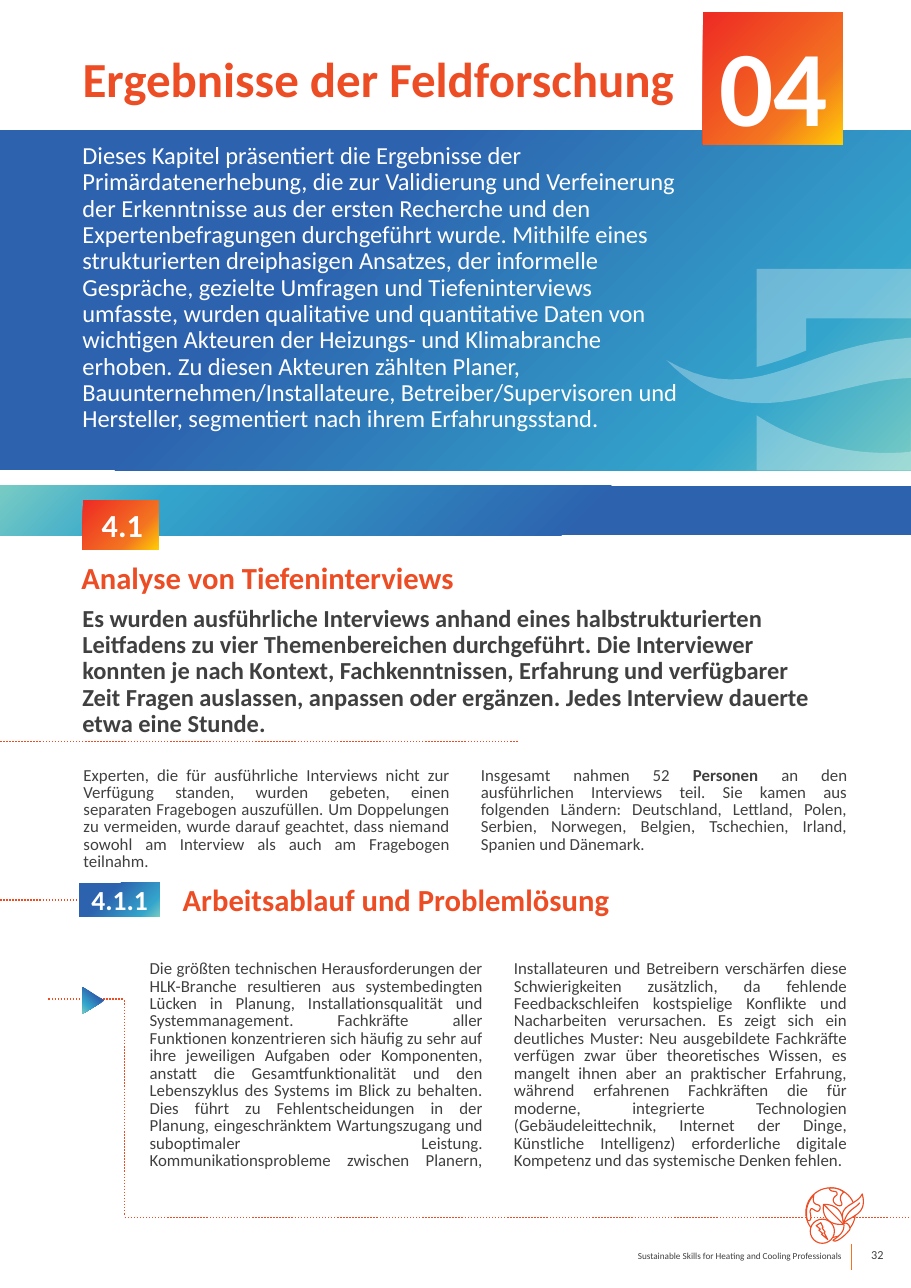
"""Builds the chapter 04 page on the field research results."""
import pptx
import pptx.util
import pptx.dml.color
import pptx.enum.dml
import pptx.enum.shapes
import pptx.enum.text
import pptx.oxml.ns
from lxml import etree

Pt = pptx.util.Pt
qn = pptx.oxml.ns.qn
SHAPE = pptx.enum.shapes.MSO_SHAPE
ALIGN = pptx.enum.text.PP_ALIGN
ANCHOR = pptx.enum.text.MSO_ANCHOR

W, H = 595.44, 841.68
BANNER_TOP, BANNER_BOTTOM = 85, 307.4
ORANGE, GREY, WHITE = "ED4D24", "404040", "FFFFFF"
BLUES = [(35, "2D62AE"), (82, "33A5CC"), (100, "77CBC4")]
ARROW_BLUES = [(35, "2D62AE"), (74, "33A5CC"), (100, "77CBC4")]
FLAME = [(3, "EE2D24"), (68, "F37321"), (100, "FFCD05")]

TITLE = "Ergebnisse der Feldforschung"
INTRO = (
    "Dieses Kapitel präsentiert die Ergebnisse der Primärdatenerhebung, die zur Validierung und "
    "Verfeinerung der Erkenntnisse aus der ersten Recherche und den Expertenbefragungen durchgeführt "
    "wurde. Mithilfe eines strukturierten dreiphasigen Ansatzes, der informelle Gespräche, gezielte "
    "Umfragen und Tiefeninterviews umfasste, wurden qualitative und quantitative Daten von wichtigen "
    "Akteuren der Heizungs- und Klimabranche erhoben. Zu diesen Akteuren zählten Planer, "
    "Bauunternehmen/Installateure, Betreiber/Supervisoren und Hersteller, segmentiert nach ihrem "
    "Erfahrungsstand.")
LEAD = (
    "Es wurden ausführliche Interviews anhand eines halbstrukturierten Leitfadens zu vier "
    "Themenbereichen durchgeführt. Die Interviewer konnten je nach Kontext, Fachkenntnissen, Erfahrung "
    "und verfügbarer Zeit Fragen auslassen, anpassen oder ergänzen. Jedes Interview dauerte etwa eine "
    "Stunde.")
EXPERTS = (
    "Experten, die für ausführliche Interviews nicht zur Verfügung standen, wurden gebeten, einen "
    "separaten Fragebogen auszufüllen. Um Doppelungen zu vermeiden, wurde darauf geachtet, dass niemand "
    "sowohl am Interview als auch am Fragebogen teilnahm.")
PEOPLE = [
    ("Insgesamt nahmen 52", False), (" Personen", True),
    (" an den ausführlichen Interviews teil. Sie kamen aus folgenden Ländern: Deutschland, Lettland, "
     "Polen, Serbien, Norwegen, Belgien, Tschechien, Irland, Spanien und Dänemark.", False)]
WORKFLOW = [
    ("Die größten technischen Herausforderungen der HLK-Branche resultieren aus systembedingten Lücken "
     "in Planung, Installationsqualität und Systemmanagement. Fachkräfte aller Funktionen konzentrieren "
     "sich häufig zu sehr auf ihre jeweiligen Aufgaben oder Komponenten, anstatt die "
     "Gesamtfunktionalität und den Lebenszyklus des Systems im Blick zu behalten. Dies führt zu "
     "Fehlentscheidungen in der Planung, eingeschränktem Wartungszugang und suboptimaler Leistung. ",
     False),
    ("Kommunikationsprobleme zwischen Planern, Installateuren und Betreibern verschärfen diese "
     "Schwierigkeiten zusätzlich, da fehlende Feedbackschleifen kostspielige Konflikte und Nacharbeiten "
     "verursachen. Es zeigt sich ein deutliches Muster: Neu ausgebildete Fachkräfte verfügen zwar über "
     "theoretisches Wissen, es mangelt ihnen aber an praktischer Erfahrung, während erfahrenen "
     "Fachkräften die für moderne, integrierte Technologien (Gebäudeleittechnik, Internet der Dinge, "
     "Künstliche Intelligenz) erforderliche digitale Kompetenz und das systemische Denken fehlen.",
     False)]

TITLE_FMT = dict(size=32, color=ORANGE, bold=True, leading=33.2)
HEADING = dict(size=20, color=ORANGE, bold=True, leading=21)
BODY = dict(size=11, color=GREY, align=ALIGN.JUSTIFY, columns=2)
TEXTS = [
    ((46.8, 90, 403.9, 210), [INTRO], dict(size=16, color=WHITE, leading=17.2)),
    ((450.7, 9, 110.2, 102), ["04"], dict(size=70, color=WHITE, bold=True, align=ALIGN.CENTER)),
    ((46.1, 365, 380.9, 28.8), ["Analyse von Tiefeninterviews"], HEADING),
    ((46.8, 392.4, 504, 96), [LEAD], dict(size=16, color=GREY, bold=True, leading=17.2)),
    ((47.5, 498.2, 513.4, 78.5), [EXPERTS, PEOPLE], dict(BODY, leading=11.2)),
    ((112.3, 575.3, 433.4, 28.8), ["Arbeitsablauf und Problemlösung"], HEADING),
    ((90.7, 624.2, 470.2, 151.9), [WORKFLOW], dict(BODY, leading=11.4)),
    ((174.2, 813.6, 383, 14.4), ["Sustainable Skills for Heating and Cooling Professionals"],
     dict(size=6, color=GREY, align=ALIGN.RIGHT)),
    ((557.3, 809.3, 27.4, 21.6), ["32"],
     dict(size=8, color=GREY, align=ALIGN.RIGHT, anchor=ANCHOR.MIDDLE)),
]
TILES = [
    ((54, 326.9, 49.7, 32.4), FLAME, "4.1", 21, 12.5),
    ((51.8, 576.7, 52.6, 22.3), BLUES, "4.1.1", 18, 8),
]
DOTTED = [
    (81.4, 795.6, W, 795.6), (0, 484.6, 338.4, 484.6), (0, 588.2, 66.2, 588.2),
    (31.7, 653, 80.6, 653), (81.4, 653.8, 81.4, 794.2)]
SWOOSH = [
    [(653.8, 226.8), (536.4, 198.7, 508.3, 277.2, 435.6, 235.4),
     (479.5, 280.1, 519.1, 260.6, 571, 249.8), (614.2, 241.2, 657.4, 252.7, 686.9, 271.4)],
    [(527, 208.1), (W, 208.1), (W, 175.7), (494.6, 175.7), (494.6, 239.8),
     (506.9, 236.9, 518.4, 232.6, 527, 229)],
    [(W, BANNER_BOTTOM), (745.2, 308.2), (701.3, 263.5, 661.7, 283, 610.6, 293),
     (567.4, 301.7, 523.4, 290.9, 494.6, 271.4), (494.6, BANNER_BOTTOM)],
]
GLOBE, ENERGY = (526.7, 776.2, 32.4, 32.4), (529.6, 796.7, 15.8, 15.8)
BOLT = (533.5, 799, 7.5, 11)
ICON_OUTLINES = [
    [(532, 781), (530, 790, 537, 785, 536, 790), (534, 795, 530, 786, 529.5, 792),
     (531, 798, 529, 798, 527.8, 797.5), (526, 791, 528, 785, 532, 781)],
    [(542, 776.6), (543, 780, 548, 777, 547, 781), (542, 784, 546, 788, 549, 788),
     (553, 787, 546, 784, 551.5, 779), (548, 776.5, 545, 776, 542, 776.6)],
    [(551.2, 800), (551, 791, 546, 787, 538.3, 787), (537, 796, 543, 801, 551.2, 800)],
    [(551.6, 799), (547, 787, 560, 788, 563.6, 780.2), (567, 793, 558, 794, 551.6, 799)],
    [(538.3, 787), (551.2, 800)],
    [(551.6, 799), (554, 790, 559, 790, 562, 786)],
    [(544.5, 810.5), (550, 807, 552, 804, 551.6, 800), (553, 798, 556, 801, 555.5, 803.5),
     (553, 807, 546, 813, 544.5, 810.5)],
]


def rgb(value):
    return pptx.dml.color.RGBColor.from_string(value)


def paint(sp, fill=None, line=None, alpha=None):
    sp.shadow.inherit = False
    if isinstance(fill, list):
        sp.fill.gradient()
        sp.fill.gradient_angle = 315
        stops = sp.element.spPr.find(qn("a:gradFill")).find(qn("a:gsLst"))
        stops.clear()
        for pos, color in fill:
            gs = etree.SubElement(stops, qn("a:gs"), pos=str(pos * 1000))
            etree.SubElement(gs, qn("a:srgbClr"), val=color)
    elif fill:
        sp.fill.solid()
        sp.fill.fore_color.rgb = rgb(fill)
        if alpha:
            color = sp.element.spPr.find(qn("a:solidFill"))[0]
            etree.SubElement(color, qn("a:alpha"), val=str(alpha * 1000))
    else:
        sp.fill.background()
    if line:
        sp.line.color.rgb = rgb(line)
        sp.line.width = Pt(0.75)
    else:
        sp.line.fill.background()
    return sp


def add_shape(s, kind, box, **look):
    return paint(s.shapes.add_shape(kind, *map(Pt, box)), **look)


def outline(s, path, limit, close=True, **look):
    points = [path[0]]
    for seg in path[1:]:
        if len(seg) == 2:
            points.append(seg)
            continue
        x0, y0 = points[-1]
        x1, y1, x2, y2, x3, y3 = seg
        for i in range(1, 25):
            t = i / 24
            a, b, c, d = (1 - t) ** 3, 3 * t * (1 - t) ** 2, 3 * t * t * (1 - t), t ** 3
            points.append((a * x0 + b * x1 + c * x2 + d * x3, a * y0 + b * y1 + c * y2 + d * y3))
    clipped = [(Pt(min(x, W)), Pt(min(y, limit))) for x, y in points]
    fb = s.shapes.build_freeform(*clipped[0], scale=1.0)
    fb.add_line_segments(clipped[1:], close=close)
    return paint(fb.convert_to_shape(), **look)


def add_line(s, ends, color, width, dash=None):
    ln = s.shapes.add_connector(pptx.enum.shapes.MSO_CONNECTOR.STRAIGHT, *map(Pt, ends))
    ln.line.color.rgb = rgb(color)
    ln.line.width = Pt(width)
    if dash:
        ln.line.dash_style = dash
    etree.SubElement(ln.element.spPr, qn("a:effectLst"))


def write(tf, paras, size, color, bold=False, align=ALIGN.LEFT, leading=None, columns=1,
          anchor=ANCHOR.TOP):
    frame = dict(word_wrap=True, auto_size=pptx.enum.text.MSO_AUTO_SIZE.NONE, vertical_anchor=anchor)
    for key, value in frame.items():
        setattr(tf, key, value)
    if columns > 1:
        body = tf._txBody.find(qn("a:bodyPr"))
        body.set("numCol", str(columns))
        body.set("spcCol", str(Pt(20.2)))
    for i, para in enumerate(paras):
        p = tf.add_paragraph() if i else tf.paragraphs[0]
        p.alignment = align
        if leading:
            p.line_spacing = Pt(leading)
        for text, strong in [(para, bold)] if isinstance(para, str) else para:
            r = p.add_run()
            r.text = text
            for key, value in dict(name="Calibri", size=Pt(size), bold=strong).items():
                setattr(r.font, key, value)
            r.font.color.rgb = rgb(color)


def main():
    prs = pptx.Presentation()
    prs.slide_width, prs.slide_height = Pt(W), Pt(H)
    s = prs.slides.add_slide(prs.slide_layouts[5])
    title = s.shapes.title
    for key, value in dict(left=46.8, top=33.1, width=408, height=37.4).items():
        setattr(title, key, Pt(value))
    write(title.text_frame, [TITLE], **TITLE_FMT)

    add_shape(s, SHAPE.RECTANGLE, (0, BANNER_TOP, W, BANNER_BOTTOM - BANNER_TOP), fill=BLUES)
    add_shape(s, SHAPE.RECTANGLE, (459.4, 7.9, 91.4, 86.4), fill=FLAME)
    for path in SWOOSH:
        outline(s, path, BANNER_BOTTOM, fill=WHITE, alpha=30)
    add_shape(s, SHAPE.RECTANGLE, (0, 317.5, W, 32.4), fill=BLUES).rotation = 180

    for ends in DOTTED:
        add_line(s, ends, ORANGE, 1, pptx.enum.dml.MSO_LINE.ROUND_DOT)
    add_line(s, (556.6, 812.9, 556.6, 830.2), "F37321", 0.75)
    add_shape(s, SHAPE.ISOSCELES_TRIANGLE, (52.6, 646.6, 17.3, 14.4), fill=ARROW_BLUES).rotation = 90

    for box, fill, label, size, inset in TILES:
        tf = add_shape(s, SHAPE.RECTANGLE, box, fill=fill).text_frame
        margins = dict(margin_left=inset, margin_right=0, margin_top=0, margin_bottom=0)
        for key, value in margins.items():
            setattr(tf, key, Pt(value))
        write(tf, [label], size, WHITE, bold=True, anchor=ANCHOR.MIDDLE)
    for box, paras, fmt in TEXTS:
        write(s.shapes.add_textbox(*map(Pt, box)).text_frame, paras, **fmt)

    add_shape(s, SHAPE.OVAL, GLOBE, line=ORANGE)
    for path in ICON_OUTLINES:
        closed = path[0] == path[-1][-2:]
        outline(s, path, H, close=closed, fill=WHITE if closed else None, line=ORANGE)
    add_shape(s, SHAPE.OVAL, ENERGY, fill=WHITE, line=ORANGE)
    add_shape(s, SHAPE.LIGHTNING_BOLT, BOLT, line=ORANGE)
    prs.save("out.pptx")


if __name__ == "__main__":
    main()
